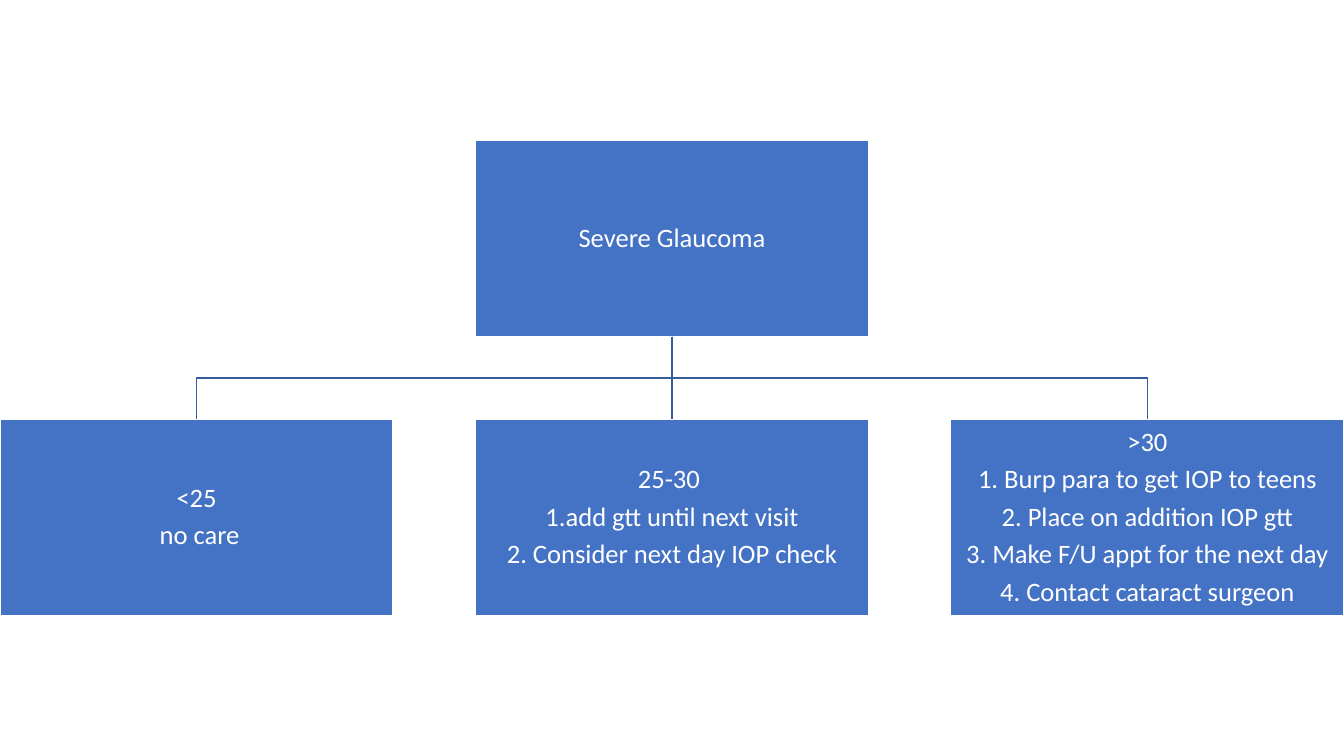
from lxml import etree
from pptx import Presentation
from pptx.dml.color import RGBColor
from pptx.enum.shapes import MSO_CONNECTOR, MSO_SHAPE
from pptx.enum.text import MSO_ANCHOR, PP_ALIGN
from pptx.oxml.ns import qn
from pptx.util import Inches, Pt

RECTANGLE = MSO_SHAPE.RECTANGLE
STRAIGHT = MSO_CONNECTOR.STRAIGHT
MIDDLE = MSO_ANCHOR.MIDDLE
CENTER = PP_ALIGN.CENTER
TOP_SIDE, BOTTOM_SIDE = 0, 2

BLUE = RGBColor(0x44, 0x72, 0xC4)
DARK_BLUE = RGBColor(0x36, 0x5B, 0x9D)
WHITE = RGBColor(0xFF, 0xFF, 0xFF)

SLIDE_WIDTH, SLIDE_HEIGHT = 13.33, 7.5
BOX_WIDTH, BOX_HEIGHT = 3.9, 1.95
ROOT_TOP, BRANCH_TOP = 1.39, 4.16

ROOT = ["Severe Glaucoma"]
BRANCHES = [
    ["<25", " no care"],
    ["25-30 ", "1.add gtt until next visit", "2. Consider next day IOP check"],
    [
        ">30",
        "1. Burp para to get IOP to teens",
        "2. Place on addition IOP gtt",
        "3. Make F/U appt for the next day",
        "4. Contact cataract surgeon",
    ],
]


class TreeSlide:
    font_name = "Calibri"
    font_size = Pt(19)
    line_width = Pt(1)

    def __init__(self, deck):
        self.slide = deck.slides.add_slide(deck.slide_layouts[6])

    def box(self, left, top, lines):
        box = self.slide.shapes.add_shape(
            RECTANGLE, Inches(left), Inches(top), Inches(BOX_WIDTH), Inches(BOX_HEIGHT)
        )
        box.shadow.inherit = False
        box.fill.solid()
        box.fill.fore_color.rgb = BLUE
        self.outline(box, WHITE)
        frame = box.text_frame
        frame.word_wrap = True
        frame.vertical_anchor = MIDDLE
        frame.margin_left = frame.margin_right = Inches(0.01)
        frame.margin_top = frame.margin_bottom = Inches(0.01)
        frame.text = "\n".join(lines)
        for para in frame.paragraphs:
            para.alignment = CENTER
            para.line_spacing = 0.9
            para.space_after = Pt(6.3)
            for span in para.runs:
                span.font.name = self.font_name
                span.font.size = self.font_size
                span.font.color.rgb = WHITE
        return box

    def outline(self, shape, color):
        shape.line.color.rgb = color
        shape.line.width = self.line_width

    def straight_link(self, parent, child):
        link = self.slide.shapes.add_connector(STRAIGHT, 0, 0, 0, 0)
        link.begin_connect(parent, BOTTOM_SIDE)
        link.end_connect(child, TOP_SIDE)
        self.outline(link, DARK_BLUE)
        etree.SubElement(link._element.spPr, qn("a:effectLst"))

    def bent_link(self, parent, child):
        """Draw down from the parent, across, and down to the child."""
        start_x = parent.left + parent.width // 2
        start_y = parent.top + parent.height
        end_x = child.left + child.width // 2
        bend_y = (start_y + child.top) // 2
        builder = self.slide.shapes.build_freeform(start_x, start_y)
        builder.add_line_segments(
            [(start_x, bend_y), (end_x, bend_y), (end_x, child.top)], close=False
        )
        link = builder.convert_to_shape()
        link.shadow.inherit = False
        link.fill.background()
        self.outline(link, DARK_BLUE)


def main():
    deck = Presentation()
    deck.slide_width = Inches(SLIDE_WIDTH)
    deck.slide_height = Inches(SLIDE_HEIGHT)
    page = TreeSlide(deck)

    step = (SLIDE_WIDTH - BOX_WIDTH) / (len(BRANCHES) - 1)
    root = page.box(step, ROOT_TOP, ROOT)
    left, middle, right = [
        page.box(column * step, BRANCH_TOP, lines)
        for column, lines in enumerate(BRANCHES)
    ]
    page.bent_link(root, left)
    page.straight_link(root, middle)
    page.bent_link(root, right)

    deck.save("out.pptx")


if __name__ == "__main__":
    main()
